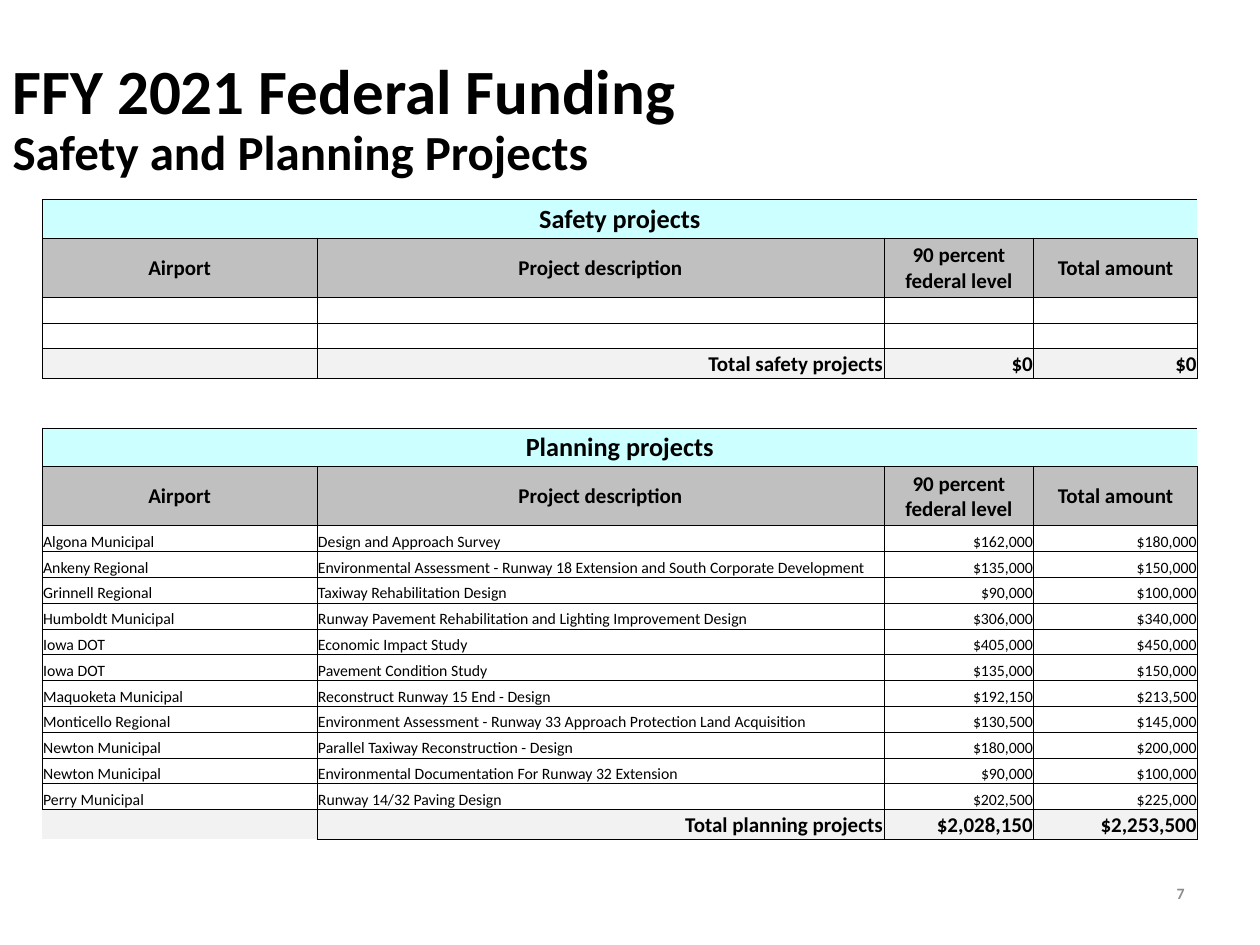
from dataclasses import dataclass

import lxml.etree
import pptx
import pptx.dml.color
import pptx.enum.text
import pptx.oxml.ns
import pptx.util

Cm = pptx.util.Cm
Pt = pptx.util.Pt
qn = pptx.oxml.ns.qn
ALIGN = pptx.enum.text.PP_ALIGN
ANCHOR = pptx.enum.text.MSO_ANCHOR


@dataclass(frozen=True)
class Theme:
    font: str = "Calibri"
    ink: str = "000000"
    muted: str = "8C8C8C"
    band: str = "CCFFFF"
    heading: str = "C0C0C0"
    total: str = "F2F2F2"
    paper: str = "FFFFFF"
    title_size: int = 36
    subtitle_size: int = 28
    band_size: int = 15
    heading_size: int = 12
    body_size: int = 9
    rule_width: float = 0.5


@dataclass(frozen=True)
class RowStyle:
    height: float
    fill: str | None
    size: int
    bold: bool
    anchor: object
    aligns: tuple
    edges: str = "LRTB"


THEME = Theme()
CENTERED = (ALIGN.CENTER,) * 4
LISTED = (ALIGN.LEFT, ALIGN.LEFT, ALIGN.RIGHT, ALIGN.RIGHT)
SUMMED = (ALIGN.RIGHT,) * 4

BAND = RowStyle(0.78, THEME.band, THEME.band_size, True, ANCHOR.MIDDLE, CENTERED, "LTB")
HEADING = RowStyle(1.19, THEME.heading, THEME.heading_size, True, ANCHOR.MIDDLE, CENTERED)
PROJECT = RowStyle(0.52, THEME.paper, THEME.body_size, False, ANCHOR.BOTTOM, LISTED)
TOTAL = RowStyle(0.6, THEME.total, THEME.heading_size, True, ANCHOR.MIDDLE, SUMMED)
SPACER = RowStyle(1.0, None, THEME.body_size, False, ANCHOR.MIDDLE, LISTED, "TB")

COLUMN_WIDTHS = (5.54, 11.43, 3.02, 3.3)
HEADINGS = ("Airport", "Project description", "90 percent federal level", "Total amount")
BLANK = ("",) * 4

PLANNING_PROJECTS = [
    ("Algona Municipal", "Design and Approach Survey", "$162,000", "$180,000"),
    ("Ankeny Regional",
     "Environmental Assessment - Runway 18 Extension and South Corporate Development",
     "$135,000", "$150,000"),
    ("Grinnell Regional", "Taxiway Rehabilitation Design", "$90,000", "$100,000"),
    ("Humboldt Municipal",
     "Runway Pavement Rehabilitation and Lighting Improvement Design",
     "$306,000", "$340,000"),
    ("Iowa DOT", "Economic Impact Study", "$405,000", "$450,000"),
    ("Iowa DOT", "Pavement Condition Study", "$135,000", "$150,000"),
    ("Maquoketa Municipal", "Reconstruct Runway 15 End - Design", "$192,150", "$213,500"),
    ("Monticello Regional",
     "Environment Assessment - Runway 33 Approach Protection Land Acquisition",
     "$130,500", "$145,000"),
    ("Newton Municipal", "Parallel Taxiway Reconstruction - Design", "$180,000", "$200,000"),
    ("Newton Municipal", "Environmental Documentation For Runway 32 Extension",
     "$90,000", "$100,000"),
    ("Perry Municipal", "Runway 14/32 Paving Design", "$202,500", "$225,000"),
]


def format_run(run, size, bold, color=THEME.ink):
    run.font.name = THEME.font
    run.font.size = Pt(size)
    run.font.bold = bold
    run.font.color.rgb = pptx.dml.color.RGBColor.from_string(color)


def place(shape, left, top, width, height):
    shape.left, shape.top = Cm(left), Cm(top)
    shape.width, shape.height = Cm(width), Cm(height)


def add_title(slide, heading, subheading):
    title = slide.shapes.title
    place(title, 0, 0.84, 24.33, 3.18)
    frame = title.text_frame
    frame.auto_size = pptx.enum.text.MSO_AUTO_SIZE.NONE
    frame.vertical_anchor = ANCHOR.MIDDLE
    lines = frame.paragraphs[0]
    lines.text = f"{heading}\v{subheading}"
    lines.alignment = ALIGN.LEFT
    lines.line_spacing = 0.9
    for run, size in zip(lines.runs, (THEME.title_size, THEME.subtitle_size)):
        format_run(run, size, True)


def add_page_number(slide, number):
    box = slide.shapes.add_textbox(Cm(18.2), Cm(17.35), Cm(5.93), Cm(1.32))
    frame = box.text_frame
    frame.word_wrap = True
    frame.vertical_anchor = ANCHOR.MIDDLE
    frame.text = number
    frame.paragraphs[0].alignment = ALIGN.RIGHT
    format_run(frame.paragraphs[0].runs[0], THEME.body_size, True, THEME.muted)


def set_borders(cell, edges):
    properties = cell._tc.get_or_add_tcPr()
    for position, edge in enumerate("LRTB"):
        line = lxml.etree.Element(qn(f"a:ln{edge}"), w=str(Pt(THEME.rule_width)))
        if edge in edges:
            paint = lxml.etree.SubElement(line, qn("a:solidFill"))
            lxml.etree.SubElement(paint, qn("a:srgbClr"), val=THEME.ink)
        else:
            lxml.etree.SubElement(line, qn("a:noFill"))
        properties.insert(position, line)


def fill_cell(cell, text, style, align, edges):
    cell.margin_left = cell.margin_right = cell.margin_top = Cm(0.02)
    cell.margin_bottom = 0
    cell.vertical_anchor = style.anchor
    if style.fill:
        cell.fill.solid()
        cell.fill.fore_color.rgb = pptx.dml.color.RGBColor.from_string(style.fill)
    else:
        cell.fill.background()
    set_borders(cell, edges)
    content = cell.text_frame.paragraphs[0]
    content.alignment = align
    if text:
        content.text = text
        format_run(content.runs[0], style.size, style.bold)
    else:
        lxml.etree.SubElement(content._p, qn("a:endParaRPr"), sz=str(style.size * 100))


def section(name, projects, total):
    return [
        (BAND, (name, "", "", "")),
        (HEADING, HEADINGS),
        *((PROJECT, project) for project in projects),
        (TOTAL, ("", f"Total {name.lower()}", *total)),
    ]


def add_funding_table(slide, rows):
    height = sum(style.height for style, _ in rows)
    table = slide.shapes.add_table(
        len(rows), len(COLUMN_WIDTHS), Cm(0.85), Cm(4.02),
        Cm(sum(COLUMN_WIDTHS)), Cm(height)).table
    table.first_row = table.horz_banding = False
    for column, width in zip(table.columns, COLUMN_WIDTHS):
        column.width = Cm(width)
    for index, (style, texts) in enumerate(rows):
        table.rows[index].height = Cm(style.height)
        if style is BAND:
            table.cell(index, 0).merge(table.cell(index, len(COLUMN_WIDTHS) - 1))
        for position, text in enumerate(texts):
            open_corner = index == len(rows) - 1 and position == 0
            edges = "RT" if open_corner else style.edges
            fill_cell(table.cell(index, position), text, style, style.aligns[position], edges)


def main():
    deck = pptx.Presentation()
    deck.slide_width, deck.slide_height = Cm(25.4), Cm(19.05)
    slide = deck.slides.add_slide(deck.slide_layouts[5])
    add_title(slide, "FFY 2021 Federal Funding", "Safety and Planning Projects")
    add_funding_table(slide, [
        *section("Safety projects", [BLANK, BLANK], ("$0", "$0")),
        (SPACER, BLANK),
        *section("Planning projects", PLANNING_PROJECTS, ("$2,028,150", "$2,253,500")),
    ])
    add_page_number(slide, "7")
    deck.save("out.pptx")


if __name__ == "__main__":
    main()
